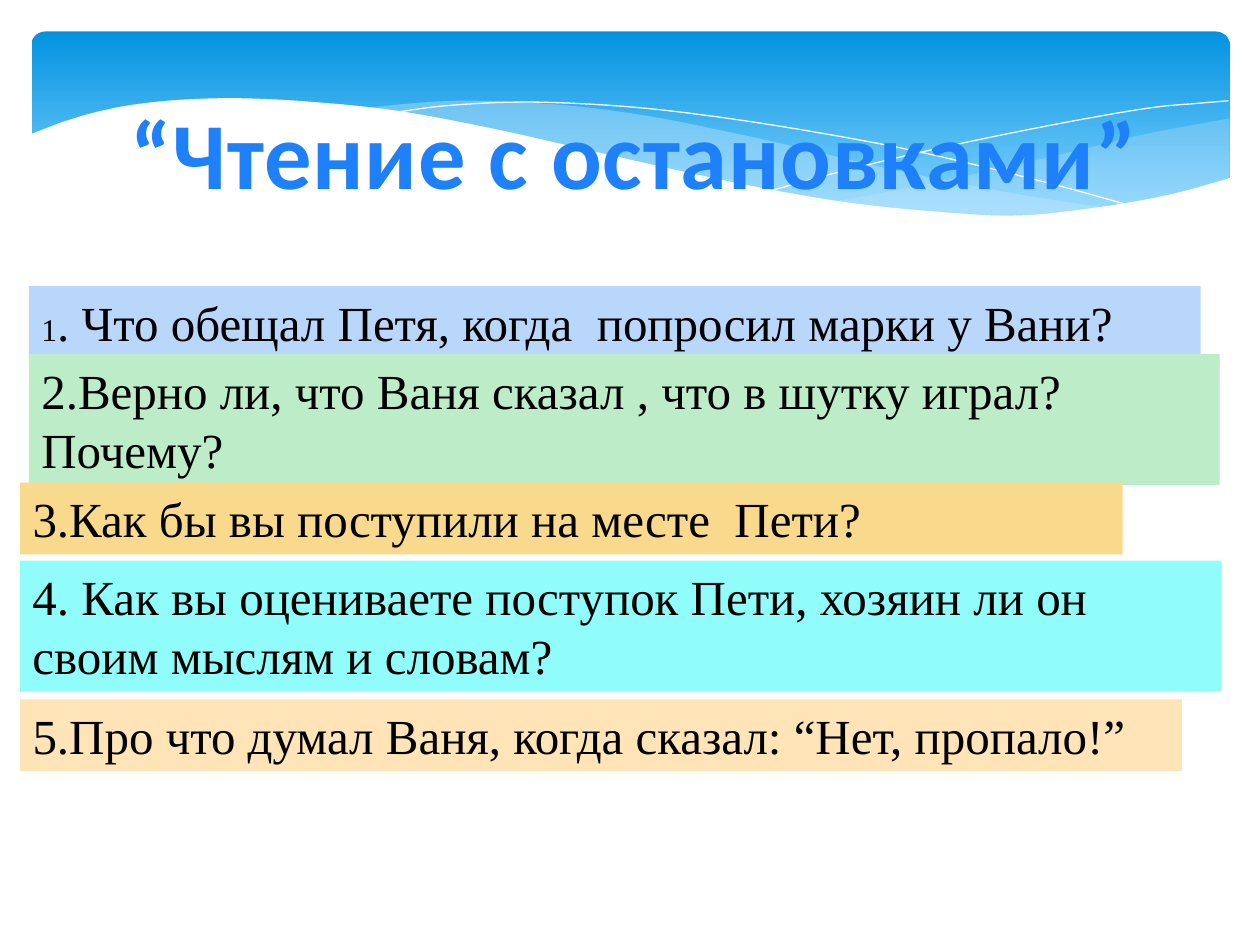
from pptx import Presentation
from pptx.dml.color import RGBColor
from pptx.enum.shapes import MSO_SHAPE
from pptx.enum.text import MSO_ANCHOR, MSO_AUTO_SIZE, PP_ALIGN
from pptx.oxml.ns import qn
from pptx.util import Pt
from lxml import etree

PX = 9144  # 100 px to the inch
ROUNDED = MSO_SHAPE.ROUNDED_RECTANGLE
MIDDLE, CENTER = MSO_ANCHOR.MIDDLE, PP_ALIGN.CENTER
NO_FIT = MSO_AUTO_SIZE.NONE
COLORS = {
    "sky_top": "0293E0", "sky_bottom": "83D3FE", "wave": "C6E7FC",
    "white": "FFFFFF", "title": "1E80FA", "text": "000000",
    "blue": "B9D6FB", "green": "BDECC9", "yellow": "F9D98C",
    "cyan": "91FDFA", "peach": "FEE4B6",
}

# Edges of the banner's waves, from the banner's top left corner
RIGHT_WAVE = [
    [(951, 69), (923, 74), (881, 82), (836, 93), (754, 112), (681, 127), (636, 135)],
    [(636, 135), (694, 143), (756, 147), (819, 146), (880, 138), (924, 127), (951, 116)],
]
MIDDLE_WAVE = [
    [(261, 61), (336, 55), (417, 58), (489, 67), (559, 81), (604, 91), (681, 109),
     (782, 129), (868, 142)],
    [(868, 142), (832, 146), (793, 148), (748, 147), (697, 143), (625, 133),
     (541, 118), (424, 91), (358, 76), (298, 65), (261, 61)],
]
LONG_LINE = [[(284, 65), (328, 59), (391, 56), (464, 59), (531, 66), (611, 78),
              (702, 95), (806, 120), (882, 141)]]
SHORT_LINE = [[(588, 126), (647, 110), (723, 92), (811, 74), (885, 61), (926, 57),
               (950, 55)]]
WHITE_WAVE = [
    [(952, 116), (905, 129), (850, 139), (784, 146), (719, 143), (643, 135),
     (554, 119), (450, 96), (366, 77), (291, 63), (225, 56), (168, 53), (121, 54),
     (81, 58), (51, 64), (27, 71), (11, 77), (-2, 82)],
    [(-2, 199), (952, 199)],
]

QUESTIONS = [
    ((23, 227, 930, 57), "blue",
     [("1", 18), (". Что обещал Петя, когда  попросил марки у Вани?", 28)]),
    ((23, 281, 945, 104), "green",
     [("2.Верно ли, что Ваня сказал , что в шутку играл?  Почему?", 28)]),
    ((16, 383, 875, 57), "yellow",
     [("3.Как бы вы поступили на месте  Пети?", 28)]),
    ((16, 445, 953, 104), "cyan",
     [("4. Как вы оцениваете поступок Пети, хозяин ли он своим мыслям и словам?", 28)]),
    ((16, 555, 922, 57), "peach",
     [("5.Про что думал Ваня, когда сказал: “Нет, пропало!”", 28)]),
]


def rgb(name):
    return RGBColor.from_string(COLORS[name])


def emu(box):
    return [v * PX for v in box]


def smooth(edge, steps=6):
    """Return points of a Catmull-Rom curve through the points of an edge."""
    if len(edge) < 3:
        return edge
    padded = [edge[0], *edge, edge[-1]]
    points = [edge[0]]
    for a, b, c, d in zip(padded, padded[1:], padded[2:], padded[3:]):
        for i in range(1, steps + 1):
            t = i / steps
            points.append(tuple(
                (2 * q + (r - p) * t + (2 * p - 5 * q + 4 * r - s) * t ** 2
                 + (3 * q - p - 3 * r + s) * t ** 3) / 2
                for p, q, r, s in zip(a, b, c, d)))
    return points


def add_wave(slide, x, y, edges, fill=None, alpha=100):
    """Draw a filled wave, or an open white line where there is no fill."""
    points = [(round((x + px) * PX), round((y + py) * PX))
              for edge in edges for px, py in smooth(edge)]
    builder = slide.shapes.build_freeform(*points[0])
    builder.add_line_segments(points[1:], close=fill is not None)
    sp = builder.convert_to_shape()
    sp.shadow.inherit = False
    if fill is None:
        sp.fill.background()
        sp.line.color.rgb = rgb("white")
        sp.line.width = Pt(0)
        return
    sp.line.fill.background()
    sp.fill.solid()
    sp.fill.fore_color.rgb = rgb(fill)
    if alpha < 100:
        color = sp.fill._xPr.find(qn("a:solidFill"))[0]
        etree.SubElement(color, qn("a:alpha")).set("val", str(alpha * 1000))


def add_banner(slide, box):
    x, y = box[:2]
    sp = slide.shapes.add_shape(ROUNDED, *emu(box))
    sp.adjustments[0] = 0.07
    sp.shadow.inherit = False
    sp.line.fill.background()
    sp.fill.gradient()
    sp.fill.gradient_angle = 270
    for stop, position, name in zip(sp.fill.gradient_stops, (0, 0.9),
                                    ("sky_top", "sky_bottom")):
        stop.position = position
        stop.color.rgb = rgb(name)
    add_wave(slide, x, y, RIGHT_WAVE, "wave", 29)
    add_wave(slide, x, y, MIDDLE_WAVE, "wave", 40)
    add_wave(slide, x, y, LONG_LINE)
    add_wave(slide, x, y, SHORT_LINE)
    add_wave(slide, x, y, WHITE_WAVE, "white")


def add_title(slide, box, text):
    title = slide.shapes.title
    slide.shapes._spTree.append(title._element)  # in front of the banner
    title.left, title.top, title.width, title.height = emu(box)
    tf = title.text_frame
    tf.auto_size = NO_FIT
    tf.vertical_anchor = MIDDLE
    p = tf.paragraphs[0]
    p.alignment = CENTER
    p.font.name, p.font.size, p.font.bold = "Calibri", Pt(54), True
    p.font.color.rgb = rgb("title")
    r = p.add_run()
    r.text = text
    r._r.get_or_add_rPr().set("spc", "50")


def add_question(slide, box, fill, runs):
    sp = slide.shapes.add_textbox(*emu(box))
    sp.fill.solid()
    sp.fill.fore_color.rgb = rgb(fill)
    tf = sp.text_frame
    tf.word_wrap = True
    p = tf.paragraphs[0]
    p.font.name = "Times New Roman"
    p.font.color.rgb = rgb("text")
    for text, size in runs:
        r = p.add_run()
        r.text = text
        r.font.size = Pt(size)


def main():
    prs = Presentation()
    prs.slide_width, prs.slide_height = emu((1000, 750))
    slide = prs.slides.add_slide(prs.slide_layouts[5])
    add_banner(slide, (25, 25, 951, 156))
    add_title(slide, (62, 70, 883, 101), "“Чтение с остановками”")
    for box, fill, runs in QUESTIONS:
        add_question(slide, box, fill, runs)
    prs.save("out.pptx")


if __name__ == "__main__":
    main()
